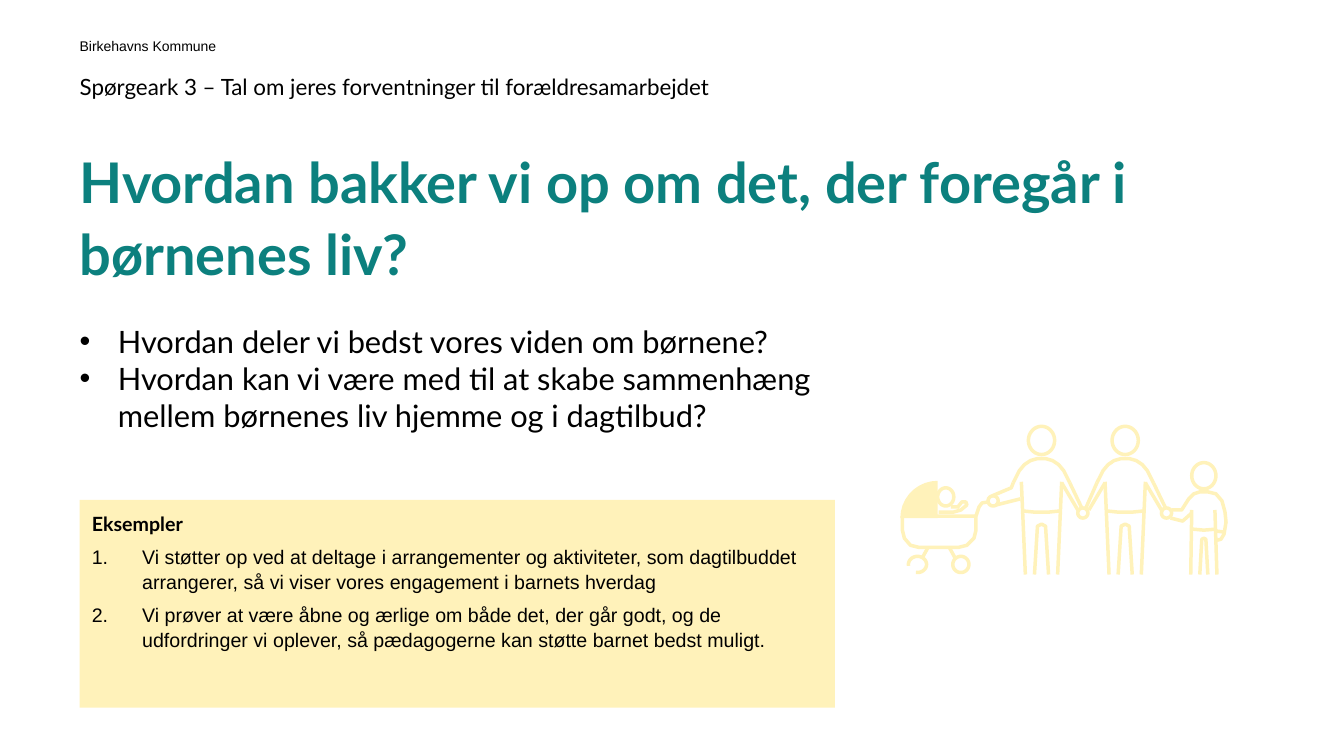
import math

import lxml.etree
import pptx
import pptx.dml.color
import pptx.enum.shapes
import pptx.enum.text
import pptx.oxml.ns
import pptx.util

RGBColor = pptx.dml.color.RGBColor
Anchor = pptx.enum.text.MSO_ANCHOR
BLACK = RGBColor(0x00, 0x00, 0x00)
TEAL = RGBColor(0x0C, 0x80, 0x7E)
YELLOW = RGBColor(0xFF, 0xF2, 0xBA)
PX = 9144
LEFT = 79
ADULT_CENTRES = (1033, 1116)


class Deck:
    """Hold the style and the current slide, and add each kind of element."""

    def __init__(self, width, height):
        self.prs = pptx.Presentation()
        self.prs.slide_width, self.prs.slide_height = width * PX, height * PX
        self.s = self.prs.slides.add_slide(self.prs.slide_layouts[6])

    def text(self, x, y, w, h, anchor=Anchor.TOP):
        sp = self.s.shapes.add_textbox(x * PX, y * PX, w * PX, h * PX)
        return self.frame(sp, 0, anchor)

    def panel(self, x, y, w, h, inset):
        kind = pptx.enum.shapes.MSO_SHAPE.RECTANGLE
        sp = self.s.shapes.add_shape(kind, x * PX, y * PX, w * PX, h * PX)
        self.paint(sp, YELLOW)
        return self.frame(sp, inset, Anchor.TOP)

    def frame(self, sp, inset, anchor):
        tf = sp.text_frame
        tf.word_wrap = True
        tf.vertical_anchor = anchor
        tf.margin_left = tf.margin_right = inset * PX
        tf.margin_top = tf.margin_bottom = inset * PX
        return tf

    def paint(self, sp, fill=None, line=None):
        sp.shadow.inherit = False
        if fill is None:
            sp.fill.background()
        else:
            sp.fill.solid()
            sp.fill.fore_color.rgb = fill
        if line is None:
            sp.line.fill.background()
        else:
            sp.line.color.rgb = line
            sp.line.width = pptx.util.Pt(2.5)

    def para(self, tf, text, size, font="Lato", color=BLACK, bold=False,
             spacing=None, after=0):
        p = tf.paragraphs[0]
        if p.runs:
            p = tf.add_paragraph()
        p.alignment = pptx.enum.text.PP_ALIGN.LEFT
        p.space_after = pptx.util.Pt(after)
        if spacing:
            p.line_spacing = spacing
        r = p.add_run()
        r.text = text
        r.font.name, r.font.size = font, pptx.util.Pt(size)
        r.font.bold, r.font.color.rgb = bold, color
        return p

    def bullet(self, p, indent, tag, **attrs):
        pPr = p._p.get_or_add_pPr()
        pPr.set("marL", str(indent * PX))
        pPr.set("indent", str(-indent * PX))
        qn = pptx.oxml.ns.qn
        lxml.etree.SubElement(pPr, qn("a:buFont"), typeface="Arial")
        lxml.etree.SubElement(pPr, qn(tag), **attrs)

    def outline(self, contours, fill=None, line=None):
        scaled = [[(x * PX, y * PX) for x, y in c] for c in contours]
        builder = self.s.shapes.build_freeform(*scaled[0][0], scale=1.0)
        for i, c in enumerate(scaled):
            if i:
                builder.move_to(*c[0])
            builder.add_line_segments(c[1:], close=c[0] == c[-1])
        self.paint(builder.convert_to_shape(), fill, line)


def ellipse(cx, cy, rx, ry, start=0, sweep=360):
    steps = max(2, sweep // 10)
    angles = [math.radians(start + sweep * i / steps) for i in range(steps + 1)]
    return [(round(cx + rx * math.cos(a), 2), round(cy + ry * math.sin(a), 2))
            for a in angles]


def adult(cx):
    half_shoulder = [(4, 455), (11, 457), (17, 461), (22, 467), (28, 479)]
    contours = [ellipse(cx, 437, 13, 14),
                [(cx - dx, y) for dx, y in reversed(half_shoulder)]
                + [(cx + dx, y) for dx, y in half_shoulder],
                [(cx - 18, 507), (cx - 8, 508), (cx + 8, 508), (cx + 18, 507)],
                [(cx - 7, 570), (cx - 4, 522), (cx, 520), (cx + 4, 522),
                 (cx + 7, 570)]]
    return contours + [[(cx + side * 20, 478), (cx + side * 16, 570)]
                       for side in (-1, 1)]


def family():
    first, second = ADULT_CENTRES
    arms = [[(cx + 28, 479), (cx + 40, 504)] for cx in ADULT_CENTRES]
    arms += [[(cx + 20, 479), (cx + 36, 506)] for cx in ADULT_CENTRES]
    arms += [[(second - 28, 479), (second - 39, 504)],
             [(second - 20, 479), (second - 36, 506)],
             [(first - 28, 479), (first - 30, 484), (984, 492)],
             [(988, 501), (1012, 495)]]
    hands = [ellipse(x, y, 5, 5) for x, y in ((985, 497), (1074, 509), (1157, 509))]
    child = [ellipse(1194, 472, 12, 13),
             [(1162, 506), (1172, 506), (1179, 495), (1184, 490), (1190, 488),
              (1198, 488), (1206, 490), (1212, 497), (1215, 508), (1216, 518),
              (1214, 530), (1211, 535), (1207, 536)],
             [(1161, 514), (1173, 517), (1182, 509)],
             [(1182, 506), (1181, 570)], [(1205, 506), (1207, 570)],
             [(1183, 525), (1194, 526), (1206, 525)], [(1207, 527), (1215, 528)],
             [(1190, 570), (1192, 535), (1194, 534), (1196, 535), (1198, 570)]]
    pram = [[(895, 512), (895, 526), (897, 534), (903, 541), (911, 543),
             (951, 543), (959, 541), (966, 534), (968, 526), (968, 512), (895, 512)],
            [(968, 512), (971, 503), (974, 499), (980, 498)],
            [(920, 544), (915, 553)], [(942, 544), (947, 553)],
            ellipse(953, 560, 8, 8), ellipse(910, 560, 9, 8, 170, 290)]
    baby = [ellipse(938, 493, 8, 9),
            [(931, 508), (946, 508), (953, 506), (959, 501), (958, 498),
             (954, 498), (950, 503), (943, 503)]]
    people = [c for cx in ADULT_CENTRES for c in adult(cx)]
    return people + arms + hands + child + pram + baby


def main():
    d = Deck(1333, 750)
    d.para(d.text(LEFT, 34, 385, 20, Anchor.BOTTOM), "Birkehavns Kommune", 10, "Arial")
    d.para(d.text(LEFT, 142, 1054, 135),
           "Hvordan bakker vi op om det, der foregår i børnenes liv?",
           40, color=TEAL, bold=True, spacing=1.07)
    tf = d.text(LEFT, 320, 786, 148)
    for question in (
            "Hvordan deler vi bedst vores viden om børnene?",
            "Hvordan kan vi være med til at skabe sammenhæng mellem børnenes "
            "liv hjemme og i dagtilbud?"):
        d.bullet(d.para(tf, question, 22), 38, "a:buChar", char="•")
    d.para(d.text(LEFT, 73, 1059, 27),
           "Spørgeark 3 – Tal om jeres forventninger til forældresamarbejdet", 16)

    d.outline(family(), line=YELLOW)
    hood = [(930, 514)] + ellipse(930, 514, 37, 37, 180, 90) + [(930, 514)]
    d.outline([hood], fill=YELLOW)

    tf = d.panel(LEFT, 496, 749, 206, 12)
    d.para(tf, "Eksempler", 14, bold=True, after=6)
    for example in (
            "Vi støtter op ved at deltage i arrangementer og aktiviteter, som "
            "dagtilbuddet arrangerer, så vi viser vores engagement i barnets hverdag",
            "Vi prøver at være åbne og ærlige om både det, der går godt, og de "
            "udfordringer vi oplever, så pædagogerne kan støtte barnet bedst muligt."):
        p = d.para(tf, example, 14, "Arial", spacing=1.05, after=6)
        d.bullet(p, 50, "a:buAutoNum", type="arabicPeriod")
    d.prs.save("out.pptx")


if __name__ == "__main__":
    main()
